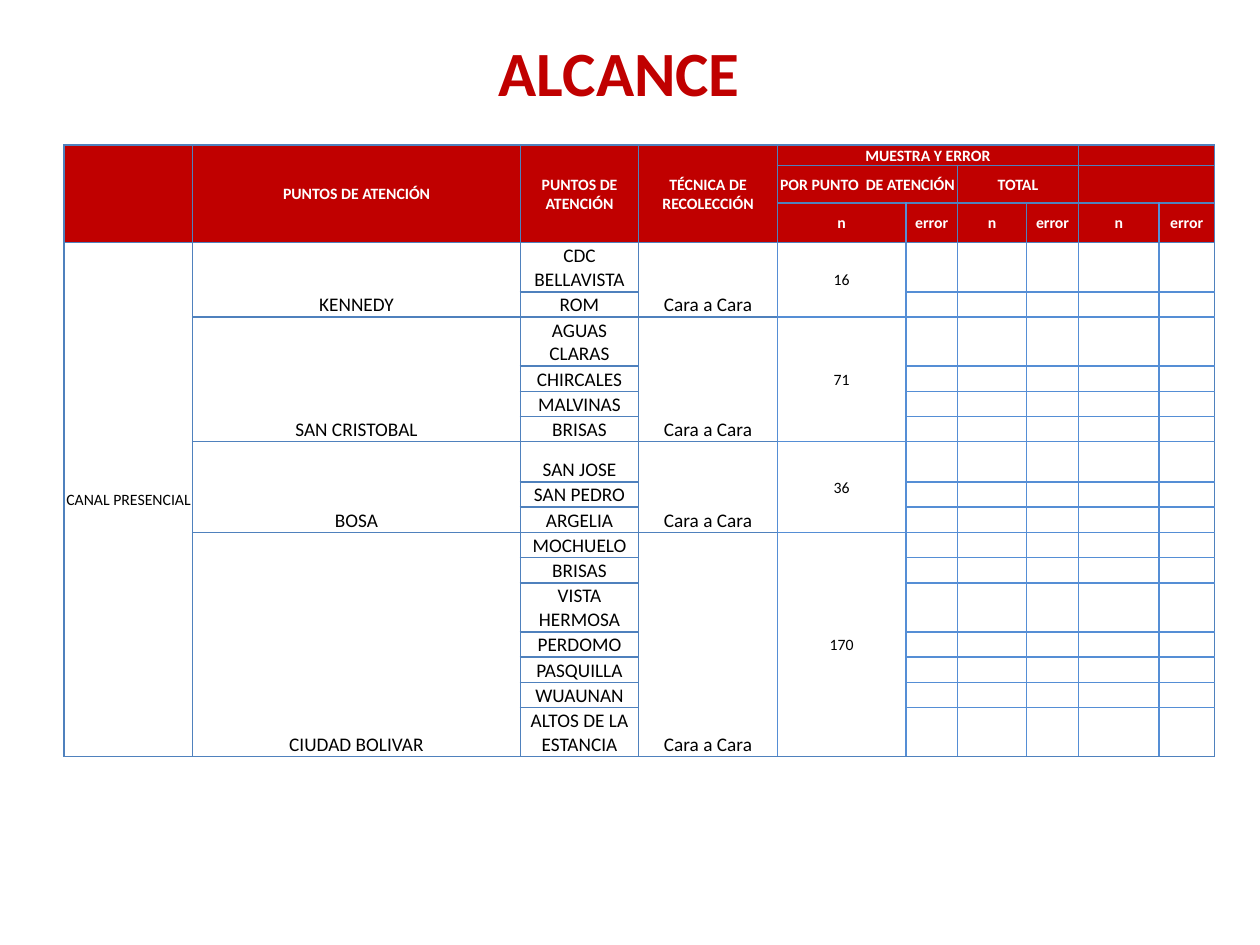
from dataclasses import dataclass

from lxml import etree
from pptx import Presentation
from pptx.dml.color import RGBColor
from pptx.enum.text import MSO_ANCHOR, PP_ALIGN
from pptx.oxml.ns import qn
from pptx.util import Inches, Pt

CENTER = PP_ALIGN.CENTER
MIDDLE, BOTTOM = MSO_ANCHOR.MIDDLE, MSO_ANCHOR.BOTTOM
FONT = "Calibri"
RED, WHITE, BLACK = "C00000", "FFFFFF", "000000"
DARK_BLUE, LIGHT_BLUE = "4F81BD", "558ED5"
HEADER_ROWS = 3
FIRST_SAMPLE_COLUMN = 4

COLUMN_WIDTHS = [1.02, 2.6, 0.94, 1.1, 1.02, 0.41, 0.55, 0.41, 0.64, 0.44]
HEADER_HEIGHTS = [0.16, 0.3, 0.3]
ONE_LINE, TWO_LINES, TALL_LINE = 0.2, 0.39, 0.32
TWO_LINE_POINTS = {"CDC BELLAVISTA", "AGUAS CLARAS", "VISTA HERMOSA", "ALTOS DE LA ESTANCIA"}


@dataclass
class Entry:
    row: int
    column: int
    text: str = ""
    row_span: int = 1
    column_span: int = 1
    size: float = 9
    anchor: MSO_ANCHOR = MIDDLE


@dataclass
class District:
    name: str
    sample: str
    points: list[str]


DISTRICTS = [
    District("KENNEDY", "16", ["CDC BELLAVISTA", "ROM"]),
    District("SAN CRISTOBAL", "71", ["AGUAS CLARAS", "CHIRCALES", "MALVINAS", "BRISAS"]),
    District("BOSA", "36", ["SAN JOSE", "SAN PEDRO", "ARGELIA"]),
    District("CIUDAD BOLIVAR", "170", ["MOCHUELO", "BRISAS", "VISTA HERMOSA", "PERDOMO",
                                       "PASQUILLA", "WUAUNAN", "ALTOS DE LA ESTANCIA"]),
]
POINTS = [point for district in DISTRICTS for point in district.points]


def rgb(color: str) -> RGBColor:
    return RGBColor.from_string(color)


def row_height(point: str) -> float:
    if point == "SAN JOSE":
        return TALL_LINE
    return TWO_LINES if point in TWO_LINE_POINTS else ONE_LINE


def header_entries() -> list[Entry]:
    side = ["", "PUNTOS DE ATENCIÓN", "PUNTOS DE ATENCIÓN", "TÉCNICA DE RECOLECCIÓN"]
    entries = [Entry(0, column, text, row_span=HEADER_ROWS) for column, text in enumerate(side)]
    entries += [Entry(0, 4, "MUESTRA Y ERROR", column_span=4), Entry(0, 8, column_span=2)]
    for column, text in zip((4, 6, 8), ("POR PUNTO  DE ATENCIÓN", "TOTAL", "")):
        entries += [Entry(1, column, text, column_span=2),
                    Entry(2, column, "n"), Entry(2, column + 1, "error")]
    return entries


def body_entries() -> list[Entry]:
    entries = [Entry(HEADER_ROWS, 0, "CANAL PRESENCIAL", row_span=len(POINTS))]
    row = HEADER_ROWS
    for district in DISTRICTS:
        span = len(district.points)
        entries += [Entry(row, 1, district.name, span, size=11, anchor=BOTTOM),
                    Entry(row, 3, "Cara a Cara", span, size=11, anchor=BOTTOM),
                    Entry(row, 4, district.sample, span)]
        for point in district.points:
            entries.append(Entry(row, 2, point, size=11, anchor=BOTTOM))
            entries += [Entry(row, column) for column in range(5, len(COLUMN_WIDTHS))]
            row += 1
    return entries


def border_colors(entry: Entry) -> dict[str, str]:
    """Dark edges around the table and header, light ones between sample cells."""
    colors = dict.fromkeys(("a:lnL", "a:lnR", "a:lnT", "a:lnB"), DARK_BLUE)
    if entry.row >= HEADER_ROWS and entry.column >= FIRST_SAMPLE_COLUMN:
        colors["a:lnL"] = LIGHT_BLUE
        if entry.column < len(COLUMN_WIDTHS) - 1:
            colors["a:lnR"] = LIGHT_BLUE
        if entry.row > HEADER_ROWS:
            colors["a:lnT"] = LIGHT_BLUE
        if entry.row + entry.row_span < HEADER_ROWS + len(POINTS):
            colors["a:lnB"] = LIGHT_BLUE
    elif entry.row == HEADER_ROWS - 1 and entry.column in (4, 8):
        colors["a:lnR"] = LIGHT_BLUE
    elif entry.row == HEADER_ROWS - 1 and entry.column in (5, 9):
        colors["a:lnL"] = LIGHT_BLUE
    return colors


def draw_borders(cell, colors: dict[str, str]) -> None:
    properties = cell._tc.get_or_add_tcPr()
    for position, (edge, color) in enumerate(colors.items()):
        line = etree.Element(qn(edge), w=str(Pt(1)))
        fill = etree.SubElement(line, qn("a:solidFill"))
        etree.SubElement(fill, qn("a:srgbClr"), val=color)
        properties.insert(position, line)


def add_span(para, text: str, size: float, color: str, bold: bool) -> None:
    span = para.add_run()
    span.text = text
    span.font.name = FONT
    span.font.size = Pt(size)
    span.font.bold = bold
    span.font.color.rgb = rgb(color)


def draw_entry(table, entry: Entry) -> None:
    cell = table.cell(entry.row, entry.column)
    if entry.row_span > 1 or entry.column_span > 1:
        cell.merge(table.cell(entry.row + entry.row_span - 1,
                              entry.column + entry.column_span - 1))
    is_header = entry.row < HEADER_ROWS
    if is_header:
        cell.fill.solid()
        cell.fill.fore_color.rgb = rgb(RED)
    else:
        cell.fill.background()
    cell.vertical_anchor = entry.anchor
    draw_borders(cell, border_colors(entry))
    if entry.text:
        para = cell.text_frame.paragraphs[0]
        para.alignment = CENTER
        add_span(para, entry.text, entry.size, WHITE if is_header else BLACK, is_header)


def add_scope_table(page) -> None:
    heights = HEADER_HEIGHTS + [row_height(point) for point in POINTS]
    frame = page.shapes.add_table(len(heights), len(COLUMN_WIDTHS), Inches(0.51), Inches(1.15),
                                  Inches(sum(COLUMN_WIDTHS)), Inches(sum(heights)))
    table = frame.table
    table.first_row = table.horz_banding = False
    for column, width in zip(table.columns, COLUMN_WIDTHS):
        column.width = Inches(width)
    for row, height in zip(table.rows, heights):
        row.height = Inches(height)
    for cell in table.iter_cells():
        cell.margin_left = cell.margin_right = cell.margin_top = Inches(0.01)
        cell.margin_bottom = 0
    for entry in header_entries() + body_entries():
        draw_entry(table, entry)
    # Small end marks keep empty cells from stretching their rows.
    for cell in table.iter_cells():
        para = cell.text_frame.paragraphs[0]
        if not para.runs:
            etree.SubElement(para._p, qn("a:endParaRPr"), sz="900")


def add_title(page) -> None:
    title = page.shapes.title
    title.left, title.top = Inches(0.9), Inches(0.21)
    title.width, title.height = Inches(8.03), Inches(0.71)
    title.text_frame.vertical_anchor = MIDDLE
    para = title.text_frame.paragraphs[0]
    para.alignment = CENTER
    add_span(para, "ALCANCE", 36, RED, True)


def main() -> None:
    deck = Presentation()
    deck.slide_width, deck.slide_height = Inches(10), Inches(7.5)
    page = deck.slides.add_slide(deck.slide_layouts.get_by_name("Title Only"))
    add_scope_table(page)
    add_title(page)
    deck.save("out.pptx")


if __name__ == "__main__":
    main()
